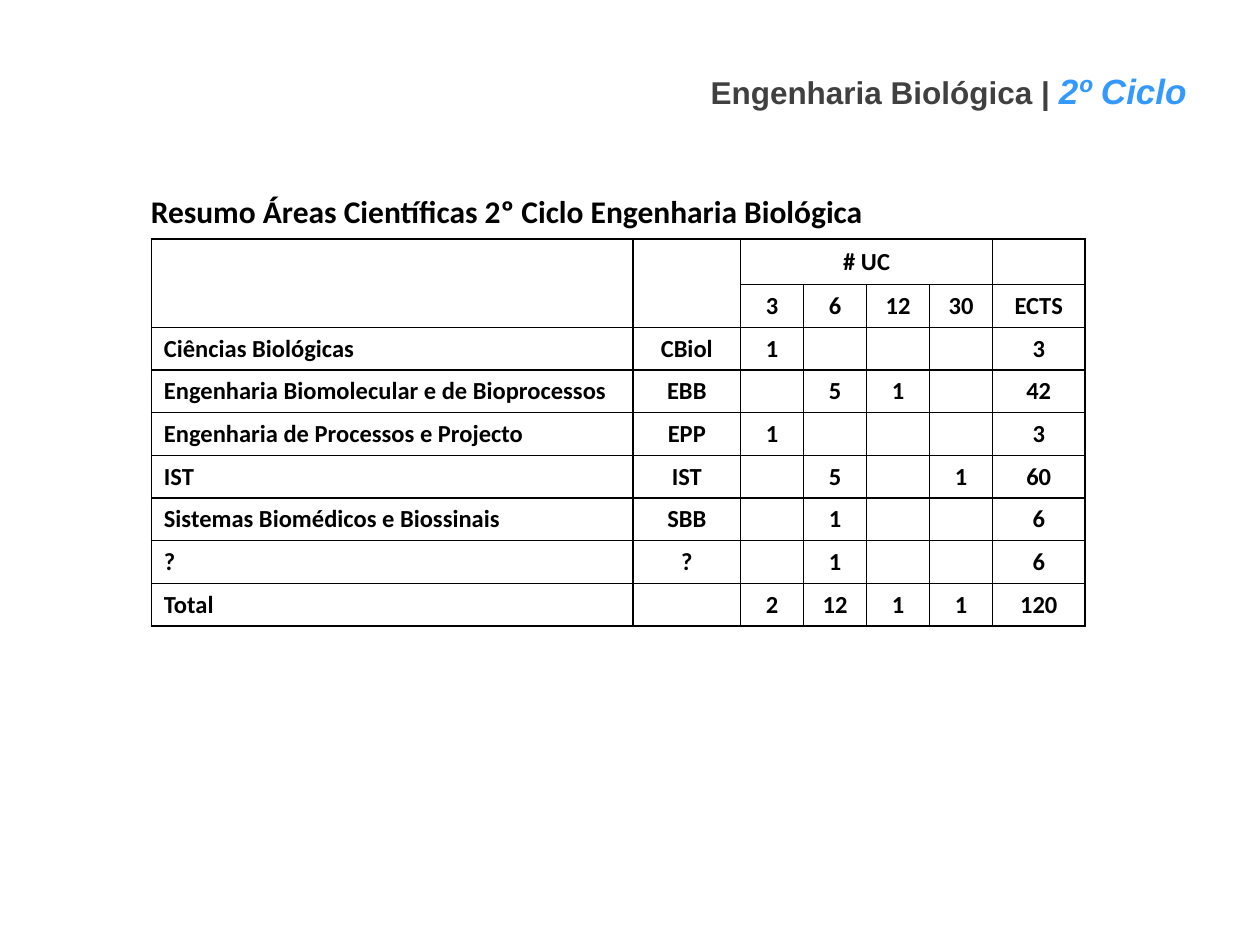
from dataclasses import dataclass

from lxml import etree
from pptx import Presentation
from pptx import util as u
from pptx.dml.color import RGBColor
from pptx.enum import text
from pptx.oxml.ns import qn


@dataclass(frozen=True)
class Theme:
    """Colours, fonts and type sizes of the slide."""
    ink: str = "000000"
    grey: str = "404040"
    accent: str = "3399FF"
    header_font: str = "Arial"
    body_font: str = "Calibri"
    cell_size: int = 14
    heading_size: int = 18
    accent_size: int = 20
    rule: float = 1


class SlideBuilder:
    """Places styled elements on the current slide."""

    def __init__(self, slide, theme):
        self.slide, self.theme = slide, theme

    def style(self, run, font, size, colour, italic=False):
        run.font.name, run.font.size = font, u.Pt(size)
        run.font.bold, run.font.italic = True, italic
        run.font.color.rgb = RGBColor.from_string(colour)

    def frame(self, shape, align):
        frame = shape.text_frame
        frame.word_wrap = True
        frame.auto_size = text.MSO_AUTO_SIZE.NONE
        frame.vertical_anchor = text.MSO_ANCHOR.MIDDLE
        line = frame.paragraphs[0]
        line.alignment, line.line_spacing = align, 1.5
        return line

    def title(self, course, cycle, left, top, width, height):
        t = self.theme
        title = self.slide.shapes.title
        title.left, title.top, title.width, title.height = map(u.Cm, (left, top, width, height))
        line = self.frame(title, text.PP_ALIGN.CENTER)
        looks = ((course, t.heading_size, t.grey, False), (cycle, t.accent_size, t.accent, True))
        for words, size, colour, italic in looks:
            run = line.add_run()
            run.text = words
            self.style(run, t.header_font, size, colour, italic)

    def heading(self, words, left, top, width, height):
        t = self.theme
        heading = self.slide.shapes.add_textbox(*map(u.Cm, (left, top, width, height)))
        line = self.frame(heading, text.PP_ALIGN.LEFT)
        line.text = words
        self.style(line.runs[0], t.body_font, t.heading_size, t.ink)

    def border(self, cell):
        properties = cell._tc.get_or_add_tcPr()
        for side in ("a:lnL", "a:lnR", "a:lnT", "a:lnB"):
            edge = etree.SubElement(properties, qn(side), w=str(u.Pt(self.theme.rule)))
            fill = etree.SubElement(edge, qn("a:solidFill"))
            etree.SubElement(fill, qn("a:srgbClr"), val=self.theme.ink)

    def cell(self, cell, words, align):
        t = self.theme
        self.border(cell)
        cell.fill.background()
        cell.vertical_anchor = text.MSO_ANCHOR.MIDDLE
        line = cell.text_frame.paragraphs[0]
        line.alignment = align
        if words:
            line.text = words
            self.style(line.runs[0], t.body_font, t.cell_size, t.ink)
        else:
            etree.SubElement(line._p, qn("a:endParaRPr"), sz=str(t.cell_size * 100))

    def table(self, rows, left, top, widths, heights, merges):
        table = self.slide.shapes.add_table(
            len(rows), len(widths), *map(u.Cm, (left, top, sum(widths), sum(heights)))).table
        table.first_row = table.horz_banding = False
        for column, width in zip(table.columns, widths):
            column.width = u.Cm(width)
        for row, height in zip(table.rows, heights):
            row.height = u.Cm(height)
        for r, row in enumerate(rows):
            for c, words in enumerate(row):
                align = text.PP_ALIGN.CENTER if c else text.PP_ALIGN.LEFT
                self.cell(table.cell(r, c), words, align)
        for first, last in merges:
            table.cell(*first).merge(table.cell(*last))


AREAS = [
    ("", "", "# UC", "", "", "", ""),
    ("", "", "3", "6", "12", "30", "ECTS"),
    ("Ciências Biológicas", "CBiol", "1", "", "", "", "3"),
    ("Engenharia Biomolecular e de Bioprocessos", "EBB", "", "5", "1", "", "42"),
    ("Engenharia de Processos e Projecto", "EPP", "1", "", "", "", "3"),
    ("IST", "IST", "", "5", "", "1", "60"),
    ("Sistemas Biomédicos e Biossinais", "SBB", "", "1", "", "", "6"),
    ("?", "?", "", "1", "", "", "6"),
    ("Total", "", "2", "12", "1", "1", "120"),
]


def main():
    deck = Presentation()
    deck.slide_width, deck.slide_height = u.Cm(25.4), u.Cm(19.05)
    builder = SlideBuilder(deck.slides.add_slide(deck.slide_layouts[5]), Theme())
    builder.title("Engenharia Biológica | ", "2º Ciclo", 12.85, 0.74, 12.55, 1.73)
    builder.table(
        AREAS, 3.05, 4.82,
        widths=[9.71, 2.17] + [1.27] * 4 + [1.86],
        heights=[0.92] + [0.86] * (len(AREAS) - 1),
        merges=[((0, 0), (1, 0)), ((0, 1), (1, 1)), ((0, 2), (0, 5))])
    builder.heading("Resumo Áreas Científicas 2º Ciclo Engenharia Biológica", 2.79, 3.2, 17.37, 1.73)
    deck.save("out.pptx")


if __name__ == "__main__":
    main()
